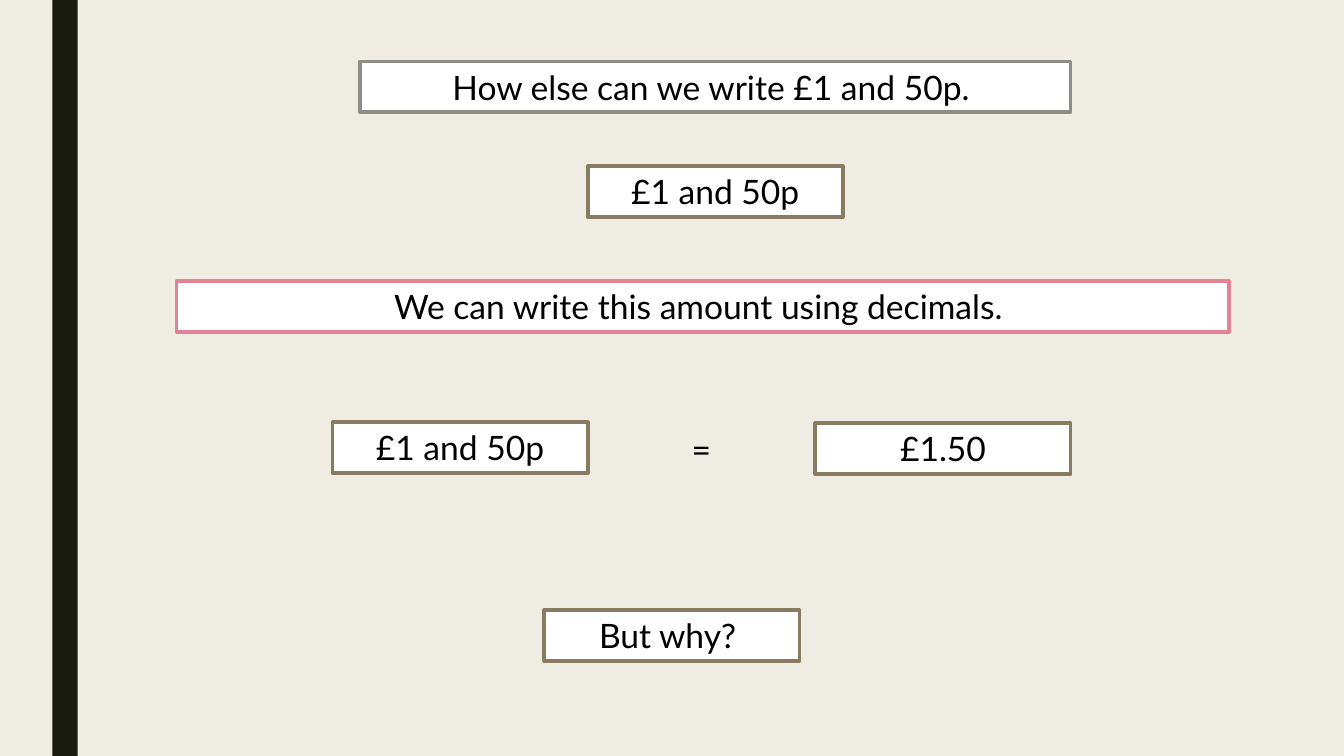
from pptx import Presentation
from pptx.dml.color import RGBColor
from pptx.enum.shapes import MSO_SHAPE as Preset
from pptx.enum.text import MSO_ANCHOR as Anchor, MSO_AUTO_SIZE as AutoSize, PP_ALIGN as Align
from pptx.util import Cm, Pt

CREAM, INK, WHITE, BLACK = "EFEDE3", "191B0E", "FFFFFF", "000000"
GREY, BROWN, PINK = "8C8D86", "897B61", "E28394"
SLIDE_WIDTH, SLIDE_HEIGHT = 33.87, 19.05
LINE_HEIGHT = 1.28
AMOUNT_WIDTH = 6.43


def colour(hex_code):
    return RGBColor.from_string(hex_code)


def write(frame, text, font="Lato", size=24, ink=BLACK, align=Align.CENTER):
    frame.word_wrap = True
    frame.auto_size = AutoSize.SHAPE_TO_FIT_TEXT
    frame.vertical_anchor = Anchor.TOP
    paragraph = frame.paragraphs[0]
    paragraph.alignment = align
    run = paragraph.add_run()
    run.text = text
    run.font.name = font
    run.font.size = Pt(size)
    run.font.color.rgb = colour(ink)


def add_rectangle(slide, left, top, width, height, fill, border=None):
    rectangle = slide.shapes.add_shape(
        Preset.RECTANGLE, Cm(left), Cm(top), Cm(width), Cm(height))
    rectangle.shadow.inherit = False
    rectangle.fill.solid()
    rectangle.fill.fore_color.rgb = colour(fill)
    if border:
        rectangle.line.color.rgb = colour(border)
        rectangle.line.width = Pt(2.75)
    else:
        rectangle.line.fill.background()
    return rectangle


def add_card(slide, text, left, top, width=AMOUNT_WIDTH, border=BROWN):
    card = add_rectangle(slide, left, top, width, LINE_HEIGHT, WHITE, border)
    write(card.text_frame, text)


def add_label(slide, text, left, top, width):
    label = slide.shapes.add_textbox(Cm(left), Cm(top), Cm(width), Cm(LINE_HEIGHT))
    write(label.text_frame, text)


def main():
    deck = Presentation()
    deck.slide_width, deck.slide_height = Cm(SLIDE_WIDTH), Cm(SLIDE_HEIGHT)
    slide = deck.slides.add_slide(deck.slide_layouts[6])
    slide.background.fill.solid()
    slide.background.fill.fore_color.rgb = colour(CREAM)

    add_rectangle(slide, 1.32, 0, 0.64, SLIDE_HEIGHT, INK)
    add_card(slide, "How else can we write £1 and 50p. ", 9.07, 1.55, 17.91, GREY)
    add_card(slide, "£1 and 50p", 14.81, 4.19)
    add_card(slide, "We can write this amount using decimals. ", 4.45, 7.09, 26.52, PINK)
    add_card(slide, "£1 and 50p", 8.38, 10.64)
    add_card(slide, "£1.50", 20.55, 10.67)
    add_label(slide, "=", 16.48, 10.69, 2.39)
    add_card(slide, "But why? ", 13.72, 15.37)

    deck.save("out.pptx")


if __name__ == "__main__":
    main()
